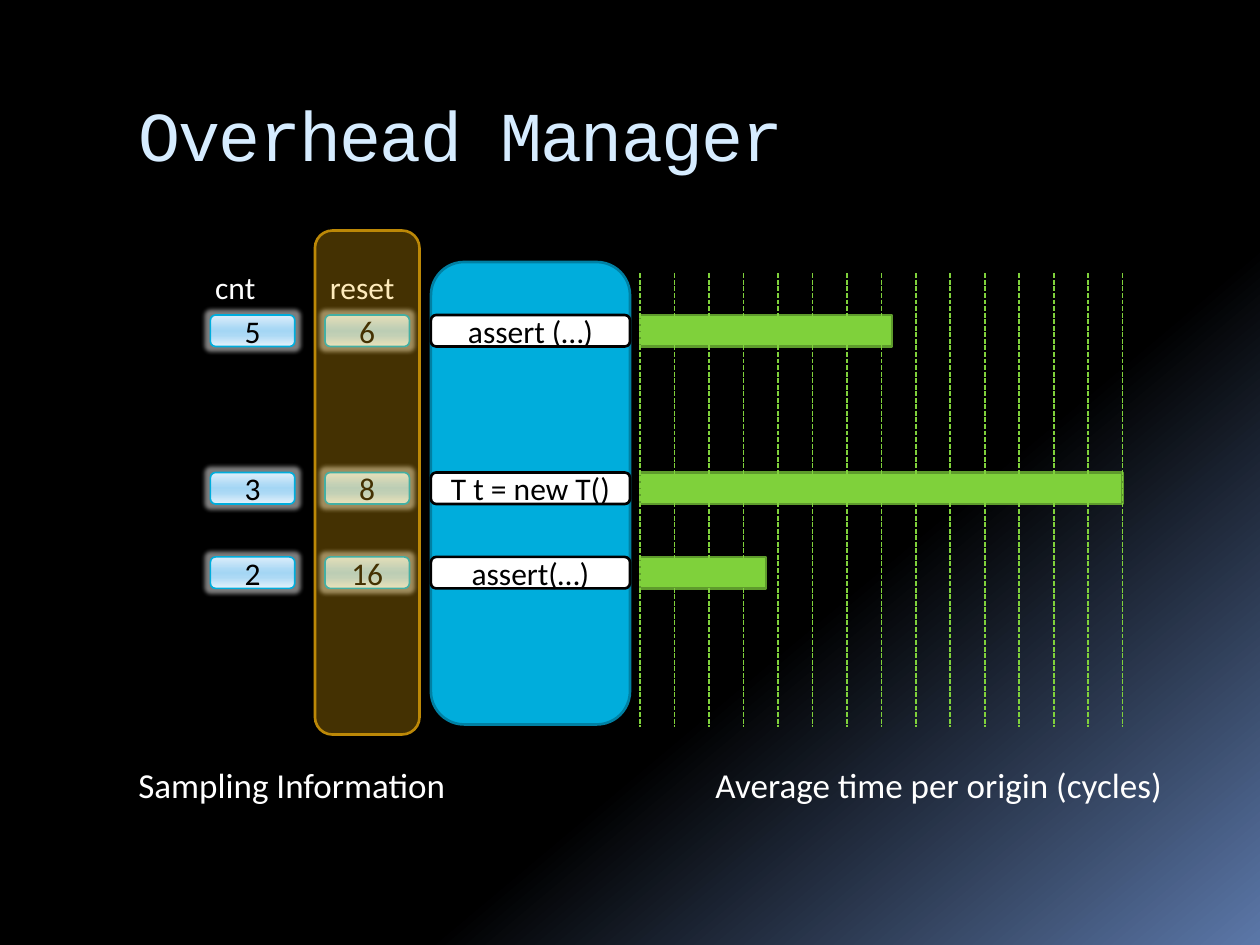
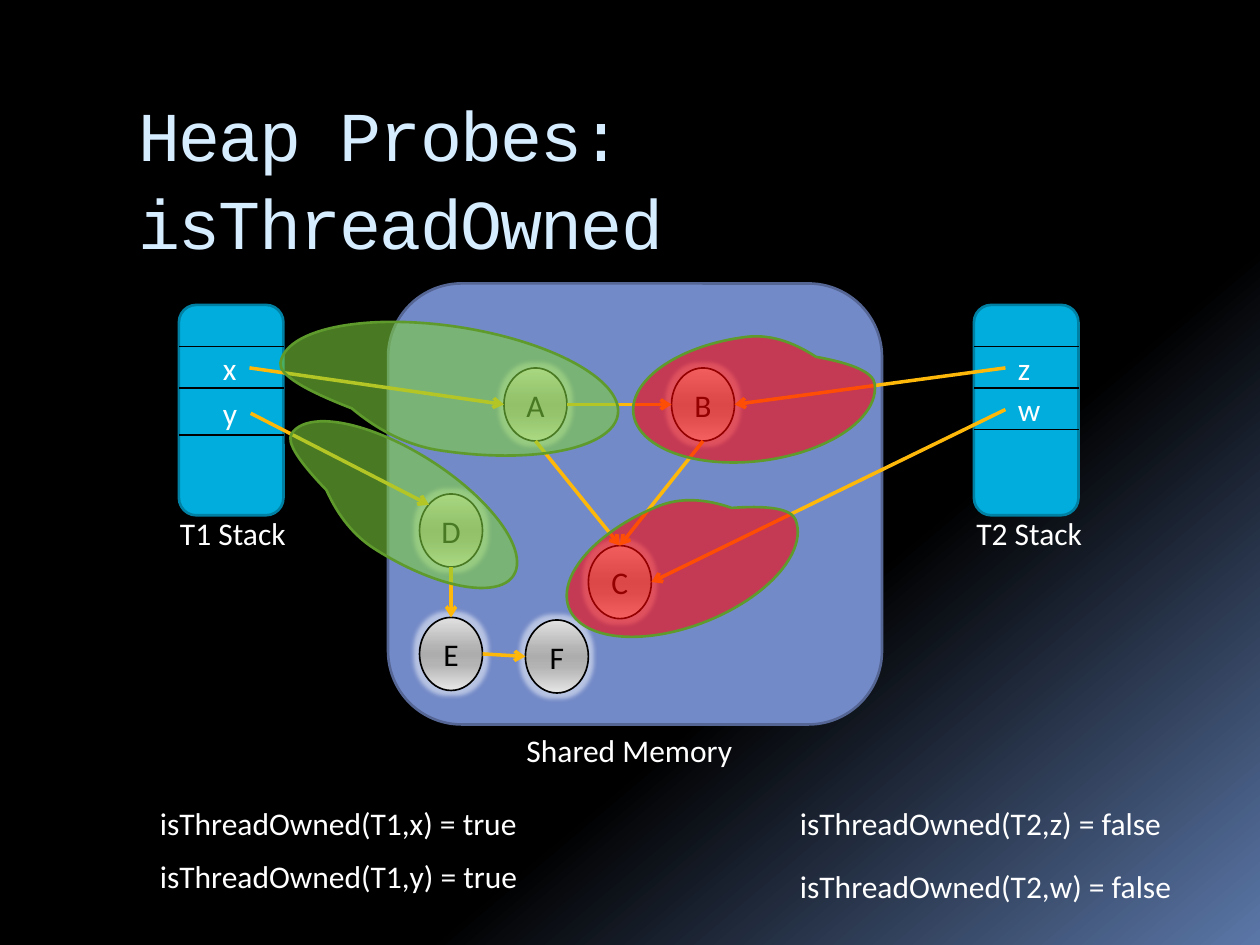
import pptx
import pptx.util
import pptx.dml.color
import pptx.enum.dml
import pptx.enum.shapes
import pptx.enum.text
import pptx.oxml
import pptx.oxml.ns

Inches = pptx.util.Inches
Pt = pptx.util.Pt
SHAPE = pptx.enum.shapes.MSO_SHAPE

# Shared style
BODY_FONT, TITLE_FONT = "Calibri", "Courier New"
WHITE, BLACK, TITLE_COLOR = "FFFFFF", "000000", "D6ECFF"
CYAN, DARK_CYAN = "00ADDC", "0080A3"
GREEN, DARK_GREEN = "7FD13B", "5E9B2C"
AMBER, DARK_AMBER = "FEB80A", "BC8807"
PERIWINKLE, DARK_PERIWINKLE = "738AC8", "556694"
RED = "FF0000"
BACKGROUND = [(0, "000000"), (65, "000000"), (100, "5B77A8")]
BLUE_GLOSS = [(0, "DEEEFA"), (40, "ACD9F5"), (50, "A4D6F4"), (65, "ACD9F5"), (100, "E5F2FB")]
GRAY_GLOSS = [(0, "E1E1E1"), (40, "B4B4B4"), (50, "ADADAD"), (65, "B4B4B4"), (100, "E7E7E7")]
THIN, OUTLINE, ARROW = 0.94, 1.5, 2

# Overhead slide: top, count, reset value, statement, bar width
PROBES = [
    (2.5, "5", "6", "assert (…)", 2),
    (3.75, "3", "8", "T t = new T()", 3.83),
    (4.42, "2", "16", "assert(…)", 1),
]
ROW_HEIGHT, CELL_WIDTH = 0.25, 0.67
COUNT_LEFT, RESET_LEFT, CODE_LEFT, CHART_LEFT = 1.67, 2.58, 3.42, 5.08
CODE_WIDTH, CHART_WIDTH, GRID_STEPS = 1.58, 3.83, 14
OVERHEAD_LABELS = [
    ("cnt", 1.61, 2.08, 0.53, 18),
    ("reset", 2.52, 2.08, 0.73, 18),
    ("Sampling Information", 1, 6.01, 2.74, 20),
    ("Average time per origin (cycles)", 5.58, 6.01, 3.9, 20),
]

# Heap slide: stack left, dividers, variables (name, left, top, width)
STACKS = [
    (1.42, (2.75, 3.08, 3.45), [("x", 1.67, 2.72, 0.32), ("y", 1.67, 3.08, 0.32)]),
    (7.73, (2.75, 3.08, 3.41), [("z", 7.98, 2.72, 0.32), ("w", 7.98, 3.05, 0.38)]),
]
STACK_TOP, STACK_WIDTH, STACK_HEIGHT = 2.42, 0.83, 1.67
HEAP_LABELS = [
    ("T1 Stack", 1.33, 4.03, 1.08),
    ("T2 Stack", 7.65, 4.03, 1.1),
    ("Shared Memory", 4.08, 5.75, 1.88),
    ("isThreadOwned(T1,x) = true", 1.17, 6.33, 3.11),
    ("isThreadOwned(T1,y) = true", 1.17, 6.75, 3.11),
    ("isThreadOwned(T2,z) = false", 6.25, 6.33, 3.19),
    ("isThreadOwned(T2,w) = false", 6.25, 6.83, 3.25),
]
NODE_WIDTH, NODE_HEIGHT = 0.5, 0.58
NODES = {"A": (4, 2.92), "B": (5.33, 2.92), "C": (4.67, 4.33),
         "D": (3.33, 3.92), "E": (3.33, 4.9), "F": (4.17, 4.92)}
VARIABLE_POINTS = {"x": (1.98, 2.92), "y": (1.99, 3.28), "z": (7.98, 2.92), "w": (7.98, 3.25)}
# From, side it leaves, to, side it enters
REFERENCES = [
    ("x", "", "A", "left"), ("A", "right", "B", "left"), ("z", "", "B", "right"),
    ("w", "", "C", "right"), ("A", "bottom", "C", "top"), ("B", "bottom", "C", "top"),
    ("y", "", "D", "corner"), ("D", "bottom", "E", "top"), ("E", "right", "F", "left"),
]
SIDES = {"left": (0, 0.5), "right": (1, 0.5), "top": (0.5, 0), "bottom": (0.5, 1),
         "corner": (0.15, 0.15)}
# Left, top, width, height, rotation, color
REGIONS = [
    (2.21, 2.59, 2.71, 0.99, 188.7, GREEN),
    (2.15, 3.59, 2.09, 0.83, 212.5, GREEN),
    (5.02, 2.67, 1.93, 0.99, 353, RED),
    (4.45, 3.98, 1.93, 0.99, 338.7, RED),
]


def rgb(color):
    return pptx.dml.color.RGBColor.from_string(color)


def add_xml(parent, tag, **attributes):
    element = pptx.oxml.parse_xml(f"<a:{tag} {pptx.oxml.ns.nsdecls('a')}/>")
    for name, value in attributes.items():
        element.set(name, str(value))
    parent.append(element)
    return element


def find(element, tag):
    return element.find(".//" + pptx.oxml.ns.qn(tag))


def fill_gradient(fill, owner, stops, angle):
    fill.gradient()
    fill.gradient_angle = 360 - angle
    stop_list = find(owner, "a:gsLst")
    for old_stop in list(stop_list):
        stop_list.remove(old_stop)
    for position, color in stops:
        stop = add_xml(stop_list, "gs", pos=position * 1000)
        add_xml(stop, "srgbClr", val=color)


def add_run(paragraph, text, size, color, font=BODY_FONT):
    run = paragraph.add_run()
    run.text = text
    run.font.size = Pt(size)
    run.font.name = font
    run.font.color.rgb = rgb(color)
    return run


def add_label(slide, text, left, top, width, size=18):
    box = slide.shapes.add_textbox(Inches(left), Inches(top), Inches(width), Inches(size * 0.022))
    box.text_frame.word_wrap = False
    add_run(box.text_frame.paragraphs[0], text, size, WHITE)


def add_block(slide, kind, left, top, width, height, fill, line, line_width=OUTLINE,
              text="", alpha=None):
    shape = slide.shapes.add_shape(kind, Inches(left), Inches(top), Inches(width), Inches(height))
    shape.shadow.inherit = False
    shape.line.color.rgb = rgb(line)
    shape.line.width = Pt(line_width)
    if isinstance(fill, list):
        fill_gradient(shape.fill, shape._element.spPr, fill, 90)
        # Soft white glow around glossy parts
        glow = add_xml(find(shape._element, "a:effectLst"), "glow", rad=63500)
        add_xml(add_xml(glow, "srgbClr", val=WHITE), "alpha", val=50000)
    else:
        shape.fill.solid()
        shape.fill.fore_color.rgb = rgb(fill)
    if alpha:
        add_xml(find(shape._element.spPr, "a:srgbClr"), "alpha", val=alpha * 1000)
    if text:
        shape.text_frame.vertical_anchor = pptx.enum.text.MSO_ANCHOR.MIDDLE
        paragraph = shape.text_frame.paragraphs[0]
        paragraph.alignment = pptx.enum.text.PP_ALIGN.CENTER
        add_run(paragraph, text, 18, BLACK)
    return shape


def add_line(slide, start, end, color, width, dashed=False, arrow=False):
    connector = slide.shapes.add_connector(
        pptx.enum.shapes.MSO_CONNECTOR.STRAIGHT, *(Inches(value) for value in (*start, *end)))
    connector.line.color.rgb = rgb(color)
    connector.line.width = Pt(width)
    if dashed:
        connector.line.dash_style = pptx.enum.dml.MSO_LINE.SQUARE_DOT
    if arrow:
        add_xml(find(connector._element, "a:ln"), "tailEnd", type="arrow")
    add_xml(connector._element.spPr, "effectLst")


def add_slide(presentation, title):
    slide = presentation.slides.add_slide(presentation.slide_layouts[6])
    fill_gradient(slide.background.fill, slide._element, BACKGROUND, 50)
    box = slide.shapes.add_textbox(Inches(1), Inches(0.56), Inches(8.5), Inches(1))
    box.text_frame.word_wrap = True
    box.text_frame.margin_top = Inches(0.13)
    paragraph = box.text_frame.paragraphs[0]
    paragraph.line_spacing = 1.05
    run = add_run(paragraph, title, 40, TITLE_COLOR, TITLE_FONT)
    run.font._element.set("spc", "-100")
    return slide


def build_overhead_slide(presentation):
    slide = add_slide(presentation, "Overhead Manager")
    # Code column and time bars
    add_block(slide, SHAPE.ROUNDED_RECTANGLE, CODE_LEFT, 2.08, CODE_WIDTH, 3.67, CYAN, DARK_CYAN)
    for top, count, reset, statement, bar_width in PROBES:
        add_block(slide, SHAPE.ROUNDED_RECTANGLE, CODE_LEFT, top, CODE_WIDTH, ROW_HEIGHT,
                  WHITE, BLACK, text=statement)
        add_block(slide, SHAPE.RECTANGLE, CHART_LEFT, top, bar_width, ROW_HEIGHT,
                  GREEN, DARK_GREEN)
        for left, value in ((COUNT_LEFT, count), (RESET_LEFT, reset)):
            add_block(slide, SHAPE.ROUNDED_RECTANGLE, left, top, CELL_WIDTH, ROW_HEIGHT,
                      BLUE_GLOSS, CYAN, THIN, value)
    # Cycle grid
    for step in range(GRID_STEPS + 1):
        x = CHART_LEFT + step * CHART_WIDTH / GRID_STEPS
        add_line(slide, (x, 2.17), (x, 5.77), GREEN, THIN, dashed=True)
    for label in OVERHEAD_LABELS:
        add_label(slide, *label)
    # Highlight over the reset column
    add_block(slide, SHAPE.ROUNDED_RECTANGLE, 2.5, 1.83, 0.83, 4, AMBER, DARK_AMBER, alpha=27)


def anchor_point(name, side):
    if name in VARIABLE_POINTS:
        return VARIABLE_POINTS[name]
    left, top = NODES[name]
    across, down = SIDES[side]
    return left + across * NODE_WIDTH, top + down * NODE_HEIGHT


def build_heap_slide(presentation):
    slide = add_slide(presentation, "Heap Probes: isThreadOwned")
    # Thread stacks
    for left, dividers, variables in STACKS:
        add_block(slide, SHAPE.ROUNDED_RECTANGLE, left, STACK_TOP, STACK_WIDTH, STACK_HEIGHT,
                  CYAN, DARK_CYAN)
        for y in dividers:
            add_line(slide, (left, y), (left + STACK_WIDTH, y), BLACK, THIN)
        for variable in variables:
            add_label(slide, *variable)
    # Shared memory with its objects
    add_block(slide, SHAPE.ROUNDED_RECTANGLE, 3.08, 2.25, 3.92, 3.5, PERIWINKLE, DARK_PERIWINKLE)
    for name, (left, top) in NODES.items():
        add_block(slide, SHAPE.OVAL, left, top, NODE_WIDTH, NODE_HEIGHT,
                  GRAY_GLOSS, BLACK, THIN, name)
    for source, exit_side, target, entry_side in REFERENCES:
        add_line(slide, anchor_point(source, exit_side), anchor_point(target, entry_side),
                 AMBER, ARROW, arrow=True)
    for label in HEAP_LABELS:
        add_label(slide, *label)
    # Ownership regions
    for left, top, width, height, rotation, color in REGIONS:
        region = add_block(slide, SHAPE.TEAR, left, top, width, height, color, DARK_GREEN,
                           alpha=58)
        region.rotation = rotation
        region.adjustments[0] = 0.547


def main():
    presentation = pptx.Presentation()
    presentation.slide_width = Inches(10)
    presentation.slide_height = Inches(7.5)
    build_overhead_slide(presentation)
    build_heap_slide(presentation)
    presentation.save("out.pptx")


if __name__ == "__main__":
    main()
